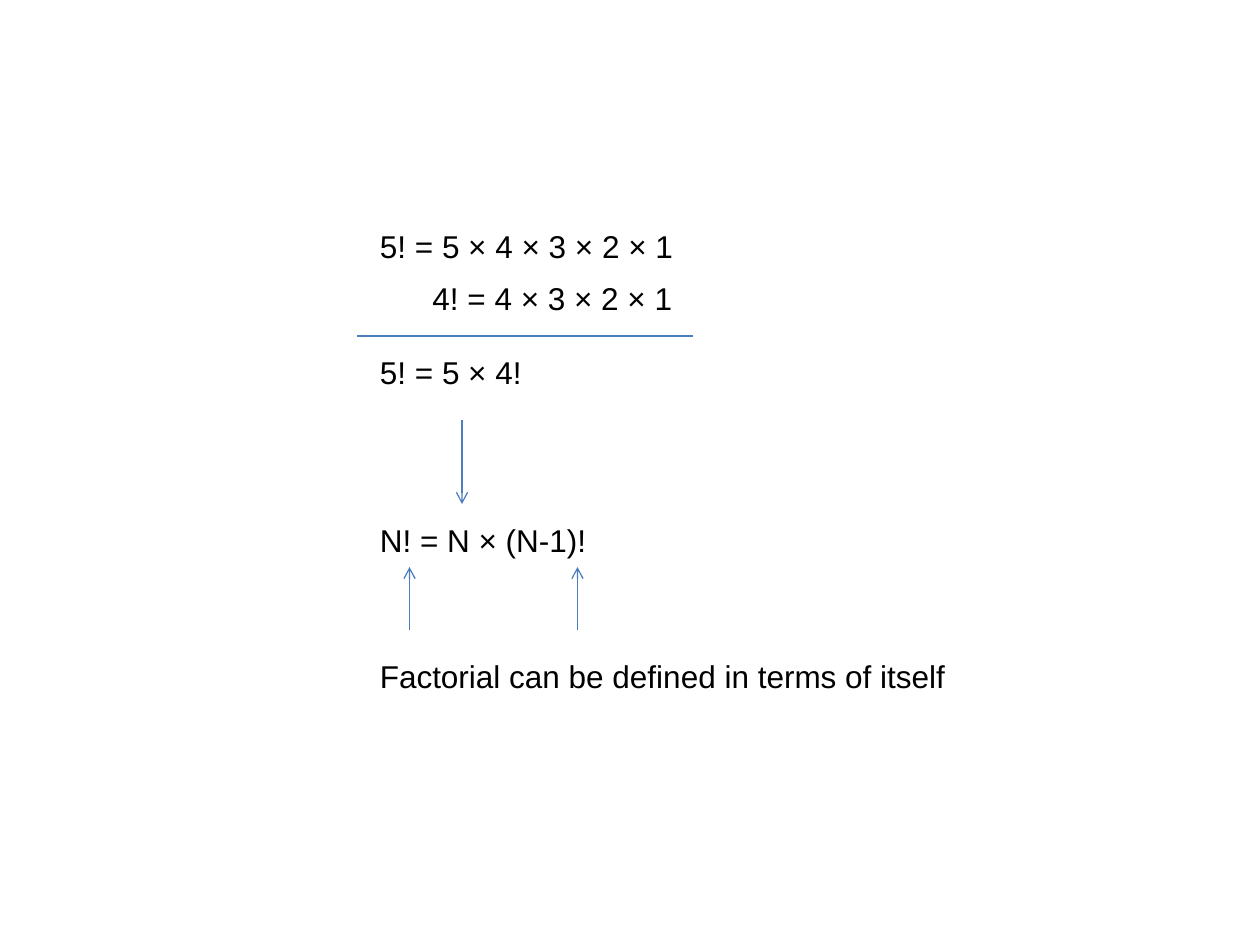
from dataclasses import dataclass

from lxml import etree
from pptx import Presentation
from pptx.dml.color import RGBColor
from pptx.enum.shapes import MSO_CONNECTOR
from pptx.enum.text import MSO_AUTO_SIZE
from pptx.oxml.ns import qn
from pptx.util import Pt

STRAIGHT = MSO_CONNECTOR.STRAIGHT
FIT_SHAPE = MSO_AUTO_SIZE.SHAPE_TO_FIT_TEXT
BLANK_LAYOUT = 6


@dataclass(frozen=True)
class Theme:
    font: str = "Arial"
    text_size: float = 18
    text_color: RGBColor = RGBColor(0x00, 0x00, 0x00)
    line_color: RGBColor = RGBColor(0x4B, 0x7E, 0xBC)
    line_width: float = 0.75
    text_height: float = 29


class SlideBuilder:
    """Holds the theme and the current slide; lengths are in points."""

    def __init__(self, slide, theme):
        self.slide = slide
        self.theme = theme

    def text(self, wording, left, top, width):
        box = self.slide.shapes.add_textbox(
            Pt(left), Pt(top), Pt(width), Pt(self.theme.text_height))
        frame = box.text_frame
        frame.word_wrap = False
        frame.auto_size = FIT_SHAPE
        frame.text = wording
        font = frame.paragraphs[0].runs[0].font
        font.name = self.theme.font
        font.size = Pt(self.theme.text_size)
        font.color.rgb = self.theme.text_color

    def line(self, x1, y1, x2, y2):
        connector = self.slide.shapes.add_connector(
            STRAIGHT, Pt(x1), Pt(y1), Pt(x2), Pt(y2))
        connector.line.color.rgb = self.theme.line_color
        connector.line.width = Pt(self.theme.line_width)
        etree.SubElement(connector._element.spPr, qn("a:effectLst"))
        return connector

    def arrow(self, x, start_y, end_y):
        connector = self.line(x, start_y, x, end_y)
        outline = connector.line._get_or_add_ln()
        etree.SubElement(outline, qn("a:tailEnd"), type="arrow")


def main():
    presentation = Presentation()
    presentation.slide_width = Pt(720)
    presentation.slide_height = Pt(540)
    slide = presentation.slides.add_slide(
        presentation.slide_layouts[BLANK_LAYOUT])
    builder = SlideBuilder(slide, Theme())
    margin = 210

    # Worked example: 5! expressed through 4!
    builder.text("5! = 5 × 4 × 3 × 2 × 1", margin, 126, 186.5)
    builder.text("4! = 4 × 3 × 2 × 1", margin + 30, 156, 156)
    builder.line(204, 192, 396, 192)
    builder.text("5! = 5 × 4!", margin, 198, 96)

    # General rule
    builder.arrow(264, 240, 288)
    builder.text("N! = N × (N-1)!", margin, 294, 133)

    # Conclusion, pointing at both factorials
    for factorial_x in (234, 330):
        builder.arrow(factorial_x, 360, 324)
    builder.text("Factorial can be defined in terms of itself",
                 margin, 372, 340.5)

    presentation.save("out.pptx")


if __name__ == "__main__":
    main()
